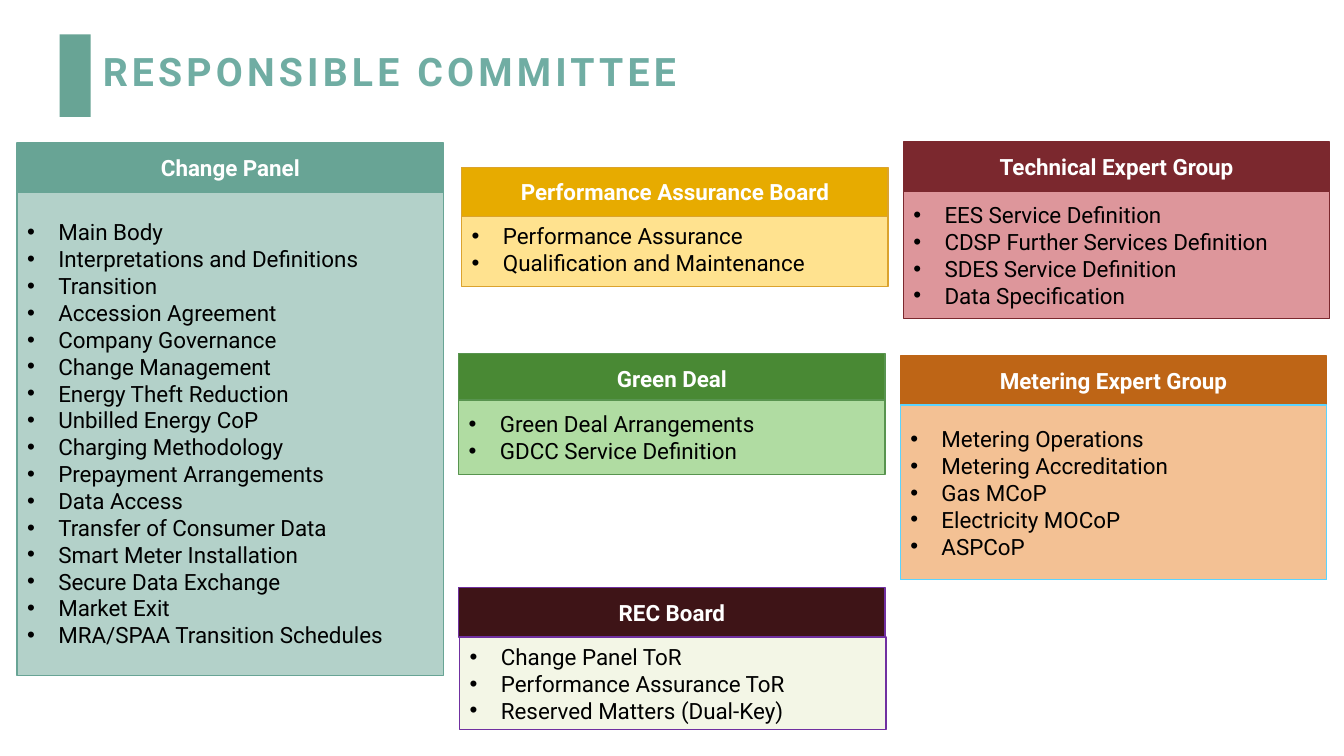
from lxml.etree import SubElement
from pptx import Presentation
from pptx.dml.color import RGBColor
from pptx.enum.shapes import MSO_SHAPE
from pptx.enum.text import MSO_ANCHOR, MSO_AUTO_SIZE, PP_ALIGN
from pptx.oxml.ns import qn
from pptx.util import Emu, Pt

# Lengths are px, 100 to the inch
EMU_PER_PX = 9144
CARD_WIDTH = 423
HEADER_HEIGHT = 49
BULLET_INDENT = 31

WHITE = RGBColor(0xFF, 0xFF, 0xFF)
BLACK = RGBColor(0x00, 0x00, 0x00)
TITLE_TEAL = RGBColor(0x70, 0xAD, 0xA3)
TEAL = RGBColor(0x68, 0xA4, 0x95)
PALE_TEAL = RGBColor(0xB3, 0xD1, 0xC9)
GOLD = RGBColor(0xE7, 0xAB, 0x00)
PALE_GOLD = RGBColor(0xFF, 0xE2, 0x8F)
GOLD_EDGE = RGBColor(0xDB, 0xA3, 0x2E)
GREEN = RGBColor(0x49, 0x89, 0x34)
PALE_GREEN = RGBColor(0xB0, 0xDC, 0xA2)
GREEN_EDGE = RGBColor(0x58, 0x94, 0x4F)
RED = RGBColor(0x7B, 0x28, 0x2E)
PALE_RED = RGBColor(0xDD, 0x96, 0x9B)
ORANGE = RGBColor(0xBE, 0x65, 0x16)
PALE_ORANGE = RGBColor(0xF3, 0xC1, 0x94)
SKY = RGBColor(0x5B, 0xD4, 0xFF)
MAROON = RGBColor(0x3E, 0x14, 0x17)
IVORY = RGBColor(0xF3, 0xF6, 0xE6)
PURPLE = RGBColor(0x70, 0x30, 0xA0)


def px(length):
    return Emu(length * EMU_PER_PX)


def write_text(paragraph, text, font="Roboto", size=16, color=BLACK, bold=False,
               align=PP_ALIGN.LEFT, bullet=False, spacing=None):
    """Put text into a paragraph and format it."""
    if bullet:
        properties = paragraph._p.get_or_add_pPr()
        properties.set("marL", str(px(BULLET_INDENT)))
        properties.set("indent", str(-px(BULLET_INDENT)))
        SubElement(properties, qn("a:buFont"), typeface="Arial")
        SubElement(properties, qn("a:buChar"), char="•")
    paragraph.alignment = align
    run = paragraph.add_run()
    run.text = text
    run.font.name = font
    run.font.size = Pt(size)
    run.font.bold = bold
    run.font.color.rgb = color
    if spacing:
        run.font._element.set("spc", str(spacing * 100))


class CommitteeSlide:
    """Holds the style and the current slide."""

    def __init__(self, presentation):
        self.slide = presentation.slides.add_slide(presentation.slide_layouts[5])

    def title(self, text, left, top, width, height):
        shape = self.slide.shapes.title
        shape.left, shape.top = px(left), px(top)
        shape.width, shape.height = px(width), px(height)
        frame = shape.text_frame
        frame.auto_size = MSO_AUTO_SIZE.NONE
        frame.vertical_anchor = MSO_ANCHOR.MIDDLE
        paragraph = frame.paragraphs[0]
        paragraph.line_spacing = 0.9
        write_text(paragraph, text, size=28, color=TITLE_TEAL, bold=True, spacing=3)

    def box(self, left, top, width, height, fill, edge=None):
        shape = self.slide.shapes.add_shape(
            MSO_SHAPE.RECTANGLE, px(left), px(top), px(width), px(height))
        shape.shadow.inherit = False
        shape.fill.solid()
        shape.fill.fore_color.rgb = fill
        if edge is None:
            shape.line.fill.background()
        else:
            shape.line.color.rgb = edge
            shape.line.width = Pt(1)
        frame = shape.text_frame
        frame.word_wrap = True
        frame.vertical_anchor = MSO_ANCHOR.MIDDLE
        return frame

    def header(self, text, left, top, fill, edge):
        frame = self.box(left, top, CARD_WIDTH, HEADER_HEIGHT, fill, edge)
        write_text(frame.paragraphs[0], text, color=WHITE, bold=True,
                   align=PP_ALIGN.CENTER)

    def bullets(self, items, left, top, height, fill, edge):
        frame = self.box(left, top, CARD_WIDTH, height, fill, edge)
        for index, item in enumerate(items):
            paragraph = frame.add_paragraph() if index else frame.paragraphs[0]
            write_text(paragraph, item, bullet=True)

    def card(self, name, items, header_at, body_at, body_height, colors,
             header_on_top=False):
        header_fill, header_edge, body_fill, body_edge = colors
        if not header_on_top:
            self.header(name, *header_at, header_fill, header_edge)
        self.bullets(items, *body_at, body_height, body_fill, body_edge)
        if header_on_top:
            self.header(name, *header_at, header_fill, header_edge)


def main():
    presentation = Presentation()
    presentation.slide_width, presentation.slide_height = px(1333), px(750)
    committees = CommitteeSlide(presentation)

    # Title with its accent bar
    committees.box(59, 34, 31, 82, TEAL)
    committees.title("RESPONSIBLE COMMITTEE", 92, 37, 1015, 72)

    # Left column
    committees.card(
        "Change Panel",
        ["Main Body", "Interpretations and Definitions", "Transition",
         "Accession Agreement", "Company Governance", "Change Management",
         "Energy Theft Reduction", "Unbilled Energy CoP", "Charging Methodology",
         "Prepayment Arrangements", "Data Access", "Transfer of Consumer Data",
         "Smart Meter Installation", "Secure Data Exchange", "Market Exit",
         "MRA/SPAA Transition Schedules"],
        (17, 142), (17, 190), 480, (TEAL, TEAL, PALE_TEAL, TEAL),
        header_on_top=True)

    # Middle column
    committees.card(
        "Performance Assurance Board",
        ["Performance Assurance", "Qualification and Maintenance"],
        (458, 166), (458, 210), 74, (GOLD, GOLD_EDGE, PALE_GOLD, GOLD_EDGE),
        header_on_top=True)
    committees.card(
        "Green Deal",
        ["Green Deal Arrangements", "GDCC Service Definition"],
        (455, 351), (455, 397), 74, (GREEN, GREEN_EDGE, PALE_GREEN, GREEN_EDGE))

    # Right column
    committees.card(
        "Technical Expert Group",
        ["EES Service Definition", "CDSP Further Services Definition",
         "SDES Service Definition", "Data Specification"],
        (896, 141), (896, 190), 126, (RED, RED, PALE_RED, RED))
    committees.card(
        "Metering Expert Group",
        ["Metering Operations", "Metering Accreditation", "Gas MCoP",
         "Electricity MOCoP", "ASPCoP"],
        (893, 353), (893, 402), 173, (ORANGE, ORANGE, PALE_ORANGE, SKY))

    # Board at the foot of the middle column
    committees.card(
        "REC Board",
        ["Change Panel ToR", "Performance Assurance ToR",
         "Reserved Matters (Dual-Key)"],
        (455, 583), (456, 632), 92, (MAROON, PURPLE, IVORY, PURPLE))

    presentation.save("out.pptx")


if __name__ == "__main__":
    main()
